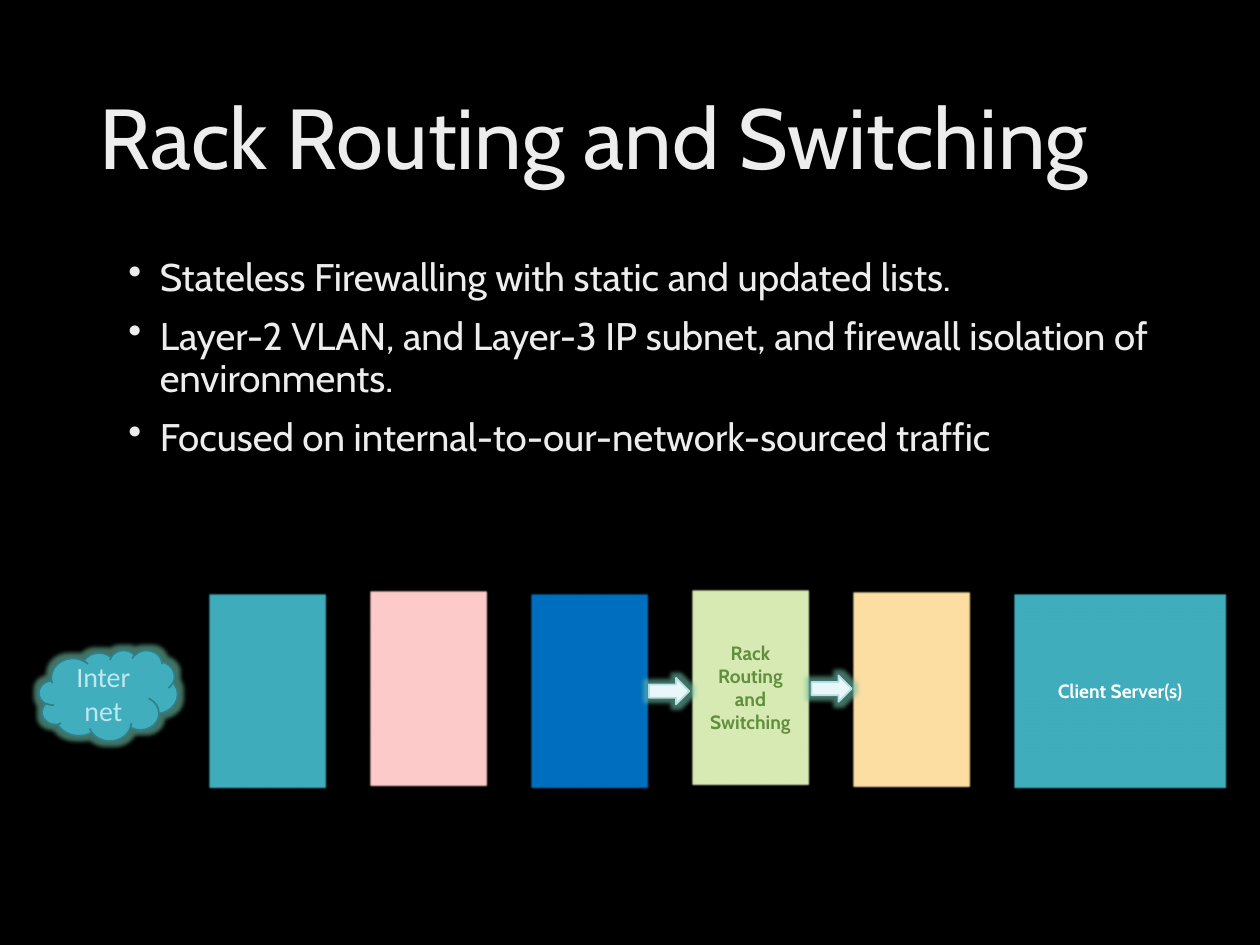
from lxml import etree
from pptx import Presentation
from pptx.dml.color import RGBColor
from pptx.enum import shapes, text
from pptx.oxml import ns
from pptx.util import Inches, Pt

BLACK = RGBColor(0x00, 0x00, 0x00)
WHITE = RGBColor(0xFF, 0xFF, 0xFF)
LIGHT_GREY = RGBColor(0xED, 0xED, 0xED)
TEAL = RGBColor(0x41, 0xAE, 0xBD)
DARK_TEAL = RGBColor(0x30, 0x81, 0x8C)
PALE_TEAL = RGBColor(0xBF, 0xE7, 0xEF)
PINK = RGBColor(0xFF, 0xCC, 0xCC)
BLUE = RGBColor(0x00, 0x70, 0xC0)
PALE_GREEN = RGBColor(0xDA, 0xEC, 0xB6)
GREEN = RGBColor(0x60, 0x8F, 0x3D)
SAND = RGBColor(0xFE, 0xE0, 0xA4)
ARROW_FILL = RGBColor(0xEA, 0xF7, 0xFA)
ARROW_LINE = RGBColor(0xB3, 0xDF, 0xE5)
GLOW = RGBColor(0x6F, 0xC0, 0xA8)


def write(shape, lines, size, color, font="Cabin", bold=False, align=text.PP_ALIGN.CENTER,
          anchor=text.MSO_ANCHOR.MIDDLE, line_spacing=None, space_before=0, bullet=None):
    frame = shape.text_frame
    frame.word_wrap = True
    frame.vertical_anchor = anchor
    for index, line in enumerate(lines):
        paragraph = frame.paragraphs[0] if index == 0 else frame.add_paragraph()
        paragraph.alignment = align
        paragraph.line_spacing = line_spacing
        paragraph.space_before = Pt(space_before if index else 0)
        if bullet:
            properties = paragraph._p.get_or_add_pPr()
            properties.set("marL", str(Inches(0.25)))
            properties.set("indent", str(-Inches(0.25)))
            etree.SubElement(properties, ns.qn("a:buChar"), char=bullet)
        run = paragraph.add_run()
        run.text = line
        run.font.name = font
        run.font.size = Pt(size)
        run.font.bold = bold
        run.font.color.rgb = color


def add_block(kind, left, top, width, height, fill, line=None):
    """Outlined shapes glow; plain ones have soft edges."""
    shape = slide.shapes.add_shape(kind, Inches(left), Inches(top), Inches(width), Inches(height))
    shape.fill.solid()
    shape.fill.fore_color.rgb = fill
    shape.shadow.inherit = False
    effects = shape._element.spPr.find(ns.qn("a:effectLst"))
    if line is None:
        shape.line.fill.background()
        etree.SubElement(effects, ns.qn("a:softEdge"), rad=str(Pt(1)))
    else:
        shape.line.color.rgb = line
        shape.line.width = Pt(1)
        glow = etree.SubElement(effects, ns.qn("a:glow"), rad=str(Pt(5)))
        color = etree.SubElement(glow, ns.qn("a:srgbClr"), val=str(GLOW))
        etree.SubElement(color, ns.qn("a:alpha"), val="60000")
    return shape


presentation = Presentation()
presentation.slide_width = Inches(10)
presentation.slide_height = Inches(7.5)
slide = presentation.slides.add_slide(presentation.slide_layouts[6])
slide.background.fill.solid()
slide.background.fill.fore_color.rgb = BLACK

# Title
title = slide.shapes.add_textbox(Inches(0.69), Inches(0.4), Inches(8.62), Inches(1.45))
write(title, ["Rack Routing and Switching"], 48.6, LIGHT_GREY,
      align=text.PP_ALIGN.LEFT, line_spacing=0.9)

# Bullet list
body = slide.shapes.add_textbox(Inches(0.92), Inches(2), Inches(8.39), Inches(4.76))
write(body, [
    "Stateless Firewalling with static and updated lists.",
    "Layer-2 VLAN, and Layer-3 IP subnet, and firewall isolation of environments.",
    "Focused on internal-to-our-network-sourced traffic",
], 22, LIGHT_GREY, align=text.PP_ALIGN.LEFT, anchor=text.MSO_ANCHOR.TOP,
    line_spacing=0.9, space_before=10, bullet="•")

# Internet cloud
cloud = add_block(shapes.MSO_SHAPE.CLOUD, 0.31, 5.16, 1.1, 0.72, TEAL, DARK_TEAL)
write(cloud, ["Internet"], 16, PALE_TEAL, font="Calibri")

# Network stages, evenly spaced: top, width, fill, label, label colour
stages = [
    (4.7, 0.95, TEAL, None, None),
    (4.68, 0.95, PINK, None, None),
    (4.7, 0.95, BLUE, None, None),
    (4.67, 0.95, PALE_GREEN, "Rack Routing and Switching", GREEN),
    (4.69, 0.95, SAND, None, None),
    (4.7, 1.71, TEAL, "Client Server(s)", WHITE),
]
for index, (top, width, fill, label, label_color) in enumerate(stages):
    stage = add_block(shapes.MSO_SHAPE.RECTANGLE, 1.65 + 1.277 * index, top, width, 1.57, fill)
    if label:
        write(stage, [label], 11, label_color, bold=True)

# Arrows into and out of the rack stage
for left, top in [(5.15, 5.38), (6.44, 5.36)]:
    add_block(shapes.MSO_SHAPE.RIGHT_ARROW, left, top, 0.32, 0.21, ARROW_FILL, ARROW_LINE)

presentation.save("out.pptx")
